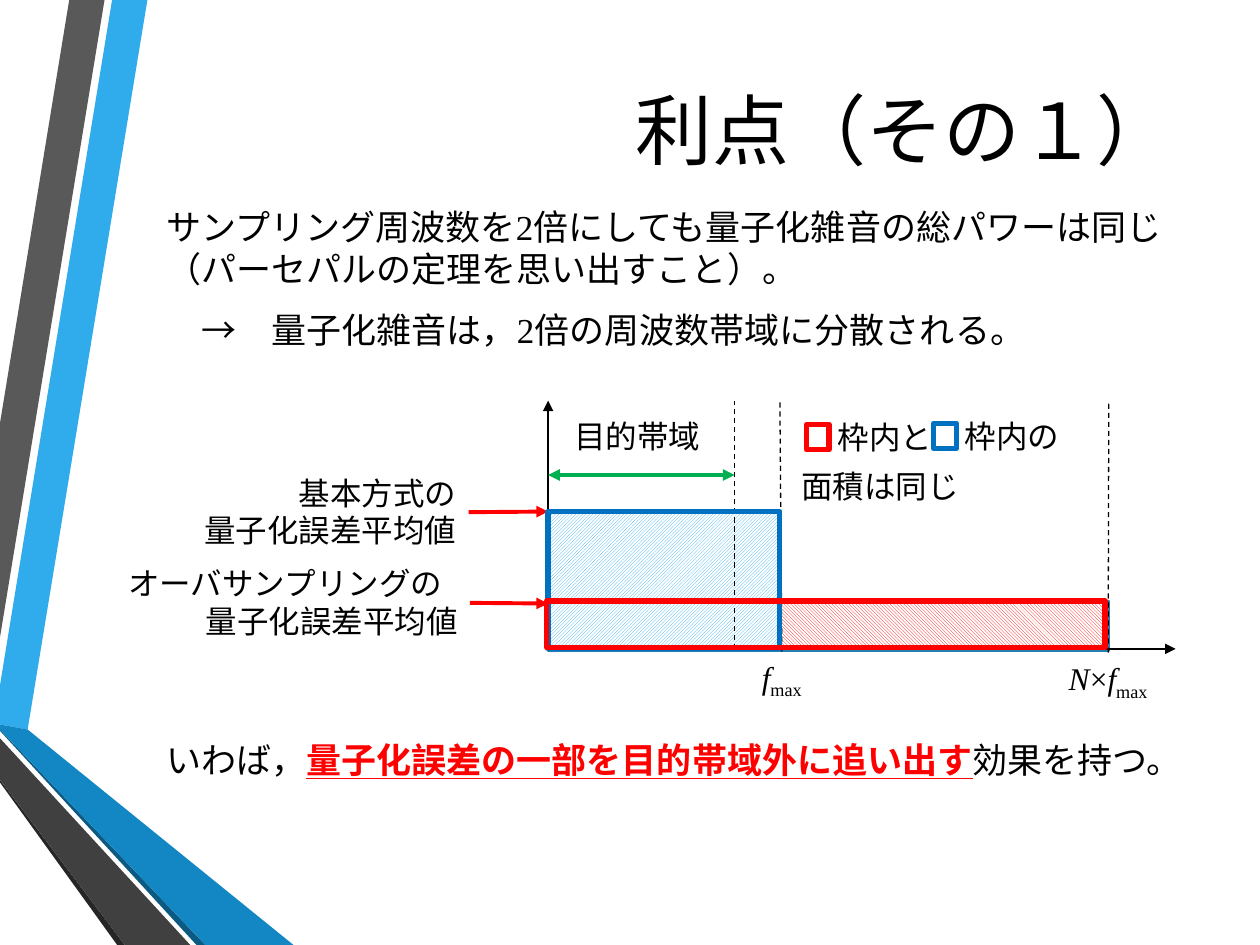
from pptx import Presentation
from pptx.dml.color import RGBColor
from pptx.enum.dml import MSO_LINE, MSO_PATTERN
from pptx.enum.shapes import MSO_CONNECTOR, MSO_SHAPE
from pptx.enum.text import MSO_ANCHOR, PP_ALIGN
from pptx.oxml.ns import qn
from pptx.util import Inches, Pt
from lxml.etree import SubElement

deck = Presentation()
deck.slide_width, deck.slide_height = Inches(10), Inches(7.5)
col, row = deck.slide_width / 100, deck.slide_height / 75
slide = deck.slides.add_slide(deck.slide_layouts[6])
shapes = slide.shapes
LEFT, RIGHT, MID = PP_ALIGN.LEFT, PP_ALIGN.RIGHT, PP_ALIGN.CENTER
BLUE, RED, GREEN, BLACK = "0070C0", "FF0000", "00B050", "000000"


def paint(part, ink):
    part.rgb = RGBColor.from_string(ink)


def say(x, y, wide, high, *paras, size=18, font="Times New Roman",
        align=(LEFT,), gap=(0, 0), anchor=MSO_ANCHOR.TOP):
    box = shapes.add_textbox(int(x * col), int(y * row), int(wide * col), int(high * row))
    frame = box.text_frame
    frame.word_wrap = True
    frame.vertical_anchor = anchor
    for n, runs in enumerate(paras):
        para = frame.paragraphs[0] if n == 0 else frame.add_paragraph()
        para.alignment = align[n % len(align)]
        para.space_before, para.space_after = Pt(gap[0]), Pt(gap[1])
        for text, look in runs:
            run = para.add_run()
            run.text = text
            run.font.size, run.font.name = Pt(size), font
            run.font.italic = look == "italic"
            run.font.bold = run.font.underline = look == "strong"
            paint(run.font.color, RED if look == "strong" else BLACK)
            if look == "sub":
                run._r.get_or_add_rPr().set("baseline", "-25000")
    return box


ribbons = [
    ("30ACEC", [(0, 54.4), (0, 57.5), (2.2, 57.9), (11.7, 0), (8.9, 0)]),
    ("595959", [(8.3, 0), (5.5, 0), (0, 33.6), (0, 50.6)]),
    ("262626", [(0, 61.9), (0, 62.1), (9.3, 75), (9.9, 75)]),
    ("0C5A82", [(0, 57.9), (0, 58), (15.6, 75), (16.3, 75)]),
    ("1287C3", [(0, 57.9), (16.3, 75), (23.3, 75), (2.2, 57.9), (0, 57.5)]),
    ("404040", [(0, 61.9), (9.9, 75), (15.1, 75), (0, 58.6)]),
]
for ink, spots in ribbons:
    spots = [(x * col, y * row) for x, y in spots]
    pen = shapes.build_freeform(*spots[0])
    pen.add_line_segments(spots[1:])
    band = pen.convert_to_shape()
    band.shadow.inherit = False
    band.fill.solid()
    paint(band.fill.fore_color, ink)
    band.line.fill.background()

say(9.2, 4.6, 85, 11.2, [("利点（その１）", "")], size=44, font="Calibri",
    align=(RIGHT,), anchor=MSO_ANCHOR.MIDDLE)
say(12.2, 15.8, 85.8, 13,
    [("サンプリング周波数を2倍にしても量子化雑音の総パワーは同じ（パーセパルの定理を思い出すこと）。", "")],
    [("　→　量子化雑音は，2倍の周波数帯域に分散される。", "")], size=20, gap=(5, 6))
say(12.2, 58.1, 85.8, 4.5,
    [("いわば，", ""), ("量子化誤差の一部を目的帯域外に追い出す", "strong"), ("効果を持つ。", "")], size=20)

peak = [("f", "italic"), ("max", "sub")]
tail = [("量子化誤差平均値", "")]
base = say(9.2, 37.1, 28, 7.1, [("基本方式の", "")], tail, align=(RIGHT,))
over = say(9.2, 44.3, 28.1, 7.1, [("オーバサンプリングの", "")], tail, align=(LEFT, RIGHT))
fmax = say(58.3, 51.7, 7.5, 4, peak, align=(MID,))
nmax = say(81.2, 51.8, 13.5, 4, [("N", "italic"), ("×", "")] + peak, align=(MID,))
for x, y, wide, text in [(44.6, 32.6, 12.6, "目的帯域"), (65.5, 32.7, 12.6, "枠内と"),
                         (75.6, 32.6, 12.6, "枠内の"), (62.6, 36.6, 18.6, "面積は同じ")]:
    say(x, y, wide, 4, [(text, "")])

up, down = MSO_PATTERN.LIGHT_UPWARD_DIAGONAL, MSO_PATTERN.LIGHT_DOWNWARD_DIAGONAL
hatches = [(43.5, 40.6, 18.4, 10.9, "30ACEC", up),
           (43.5, 47.7, 44.5, 4, RED, down),
           (43.5, 47.7, 18.4, 3.8, "30ACEC", up)]
frames = [(43.5, 40.6, 18.4, 10.9, BLUE, None), (43.4, 47.7, 44.3, 3.7, RED, None),
          (64, 33.7, 1.8, 2, RED, None), (74.1, 33.6, 1.8, 2, BLUE, None)]
lines = [
    (43.3, 51.5, 93.3, 51.5, BLACK, 0.75, ("tail",), None, None),
    (43.5, 51.4, 43.5, 31.8, BLACK, 0.75, ("tail",), None, None),
    (61.9, 51.6, 61.9, 31.8, BLACK, 0.75, (), fmax, 0),
    (88, 51.7, 88, 31.9, BLACK, 0.75, (), nmax, 0),
    (58.3, 51.5, 58.3, 31.8, BLACK, 0.75, (), None, None),
    (43.5, 37.7, 58.3, 37.7, GREEN, 2.25, ("head", "tail"), None, None),
    (37.2, 40.6, 43.5, 40.6, RED, 2.25, ("tail",), base, 3),
    (37.3, 47.9, 43.5, 47.9, RED, 2.25, ("tail",), over, 3),
]

for group in (hatches, lines, frames):
    for item in group:
        x, y, wide, high, ink, *rest = item
        spot = [int(x * col), int(y * row), int(wide * col), int(high * row)]
        if group is lines:
            size, ends, box, side = rest
            wire = shapes.add_connector(MSO_CONNECTOR.STRAIGHT, *spot)
            if box is not None:
                wire.begin_connect(box, side)
            paint(wire.line.color, ink)
            wire.line.width = Pt(size)
            if not ends:
                wire.line.dash_style = MSO_LINE.DASH
            for end in ends:
                SubElement(wire.line._get_or_add_ln(), qn(f"a:{end}End"), type="triangle")
            SubElement(wire._element.spPr, qn("a:effectLst"))
            continue
        block = shapes.add_shape(MSO_SHAPE.RECTANGLE, *spot)
        block.shadow.inherit = False
        if rest[0] is None:
            block.fill.background()
        else:
            block.fill.patterned()
            block.fill.pattern = rest[0]
            paint(block.fill.fore_color, ink)
            paint(block.fill.back_color, "FFFFFF")
        paint(block.line.color, ink if group is frames else "247FAF")
        block.line.width = Pt(3 if group is frames else 1.25)

deck.save("out.pptx")
